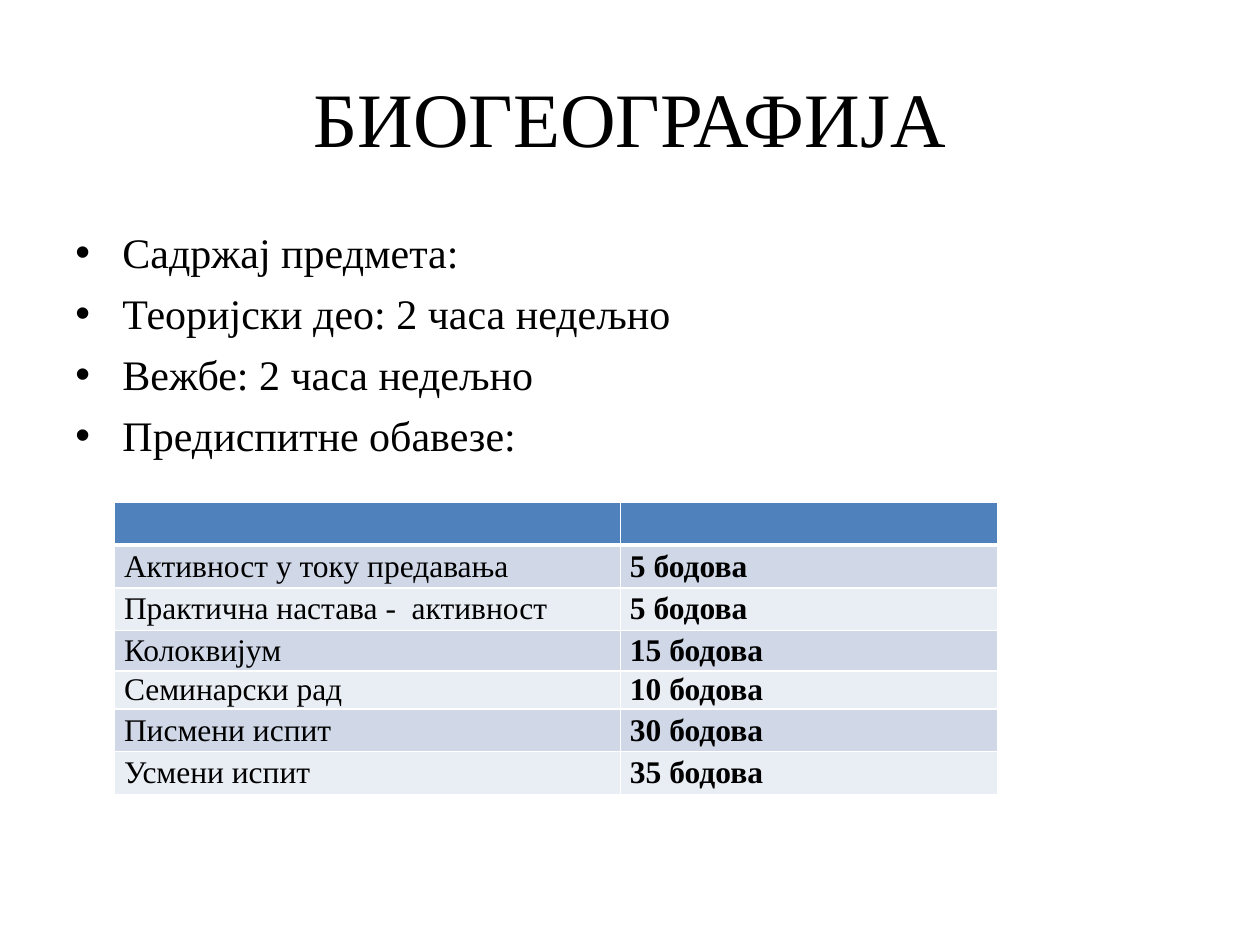
from dataclasses import dataclass

from lxml import etree
from pptx import Presentation
from pptx.dml.color import RGBColor
from pptx.enum.text import MSO_ANCHOR, PP_ALIGN
from pptx.oxml.ns import qn
from pptx.util import Cm, Pt

MIDDLE = MSO_ANCHOR.MIDDLE
CENTER = PP_ALIGN.CENTER


@dataclass(frozen=True)
class Theme:
    font: str = "Times New Roman"
    ink: str = "000000"
    border: str = "FFFFFF"
    header: str = "4F81BD"
    bands: tuple = ("D0D8E8", "E9EDF4")
    title_size: int = 44
    body_size: int = 24
    table_size: int = 18


THEME = Theme()

TOPICS = [
    "Садржај предмета:",
    "Теоријски део: 2 часа недељно",
    "Вежбе: 2 часа недељно",
    "Предиспитне обавезе:",
]
POINTS = [
    ("Активност у току предавања", 5),
    ("Практична настава -  активност", 5),
    ("Колоквијум", 15),
    ("Семинарски рад", 10),
    ("Писмени испит", 30),
    ("Усмени испит", 35),
]


def style_font(font, size, bold=False):
    font.name = THEME.font
    font.size = Pt(size)
    font.bold = bold
    font.color.rgb = RGBColor.from_string(THEME.ink)


def add_text_box(page, left, top, width, height, text):
    box = page.shapes.add_textbox(left, top, width, height)
    box.text_frame.word_wrap = True
    box.text_frame.text = text
    return box.text_frame


def add_title(page, left, top, width, height):
    frame = add_text_box(page, left, top, width, height, "БИОГЕОГРАФИЈА")
    frame.vertical_anchor = MIDDLE
    para = frame.paragraphs[0]
    para.alignment = CENTER
    style_font(para.runs[0].font, THEME.title_size)


def add_bullet(para, indent):
    properties = para._p.get_or_add_pPr()
    properties.set("marL", str(indent))
    properties.set("indent", str(-indent))
    etree.SubElement(properties, qn("a:buFont"), typeface="Arial")
    etree.SubElement(properties, qn("a:buChar"), char="•")


def add_topics(page, left, top, width, height):
    frame = add_text_box(page, left, top, width, height, "\n".join(TOPICS))
    for para in frame.paragraphs:
        para.space_before = Pt(6)
        add_bullet(para, Cm(0.95))
        style_font(para.runs[0].font, THEME.body_size)


def set_borders(cell, bottom_width):
    """Draw all four sides; they must precede the fill in the cell's XML."""
    properties = cell._tc.get_or_add_tcPr()
    widths = {"a:lnL": 1, "a:lnR": 1, "a:lnT": 1, "a:lnB": bottom_width}
    for position, (tag, width) in enumerate(widths.items()):
        line = etree.Element(qn(tag), w=str(Pt(width)))
        fill = etree.SubElement(line, qn("a:solidFill"))
        etree.SubElement(fill, qn("a:srgbClr"), val=THEME.border)
        properties.insert(position, line)


def fill_cell(cell, text, color, bold, bottom_width):
    cell.margin_left = cell.margin_right = Cm(0.19)
    cell.margin_top = cell.margin_bottom = 0
    cell.vertical_anchor = MIDDLE
    cell.fill.solid()
    cell.fill.fore_color.rgb = RGBColor.from_string(color)
    set_borders(cell, bottom_width)
    cell.text_frame.text = text
    para = cell.text_frame.paragraphs[0]
    style_font(para.runs[0].font if para.runs else para.font, THEME.table_size, bold)


def add_points_table(page, left, top, width, height):
    rows = [("", "")] + [(task, f"{points} бодова") for task, points in POINTS]
    table = page.shapes.add_table(len(rows), 2, left, top, width, height).table
    table.columns[0].width = Cm(10.2)
    table.columns[1].width = width - Cm(10.2)
    row_heights = [0.86, 0.86, 0.86, 0.82, 0.71, 0.86, 0.86]
    for index, (texts, row_height) in enumerate(zip(rows, row_heights)):
        table.rows[index].height = Cm(row_height)
        is_header = index == 0
        color = THEME.header if is_header else THEME.bands[(index - 1) % 2]
        for column, text in enumerate(texts):
            fill_cell(table.cell(index, column), text, color,
                      bold=column == 1, bottom_width=3 if is_header else 1)


def main():
    deck = Presentation()
    deck.slide_width, deck.slide_height = Cm(25.4), Cm(19.05)
    page = deck.slides.add_slide(deck.slide_layouts[6])
    add_topics(page, Cm(1.27), Cm(4.45), Cm(22.86), Cm(12.57))
    add_title(page, Cm(1.27), Cm(0.76), Cm(22.86), Cm(3.18))
    add_points_table(page, Cm(2.31), Cm(10.13), Cm(17.8), Cm(5.83))
    deck.save("out.pptx")


if __name__ == "__main__":
    main()
